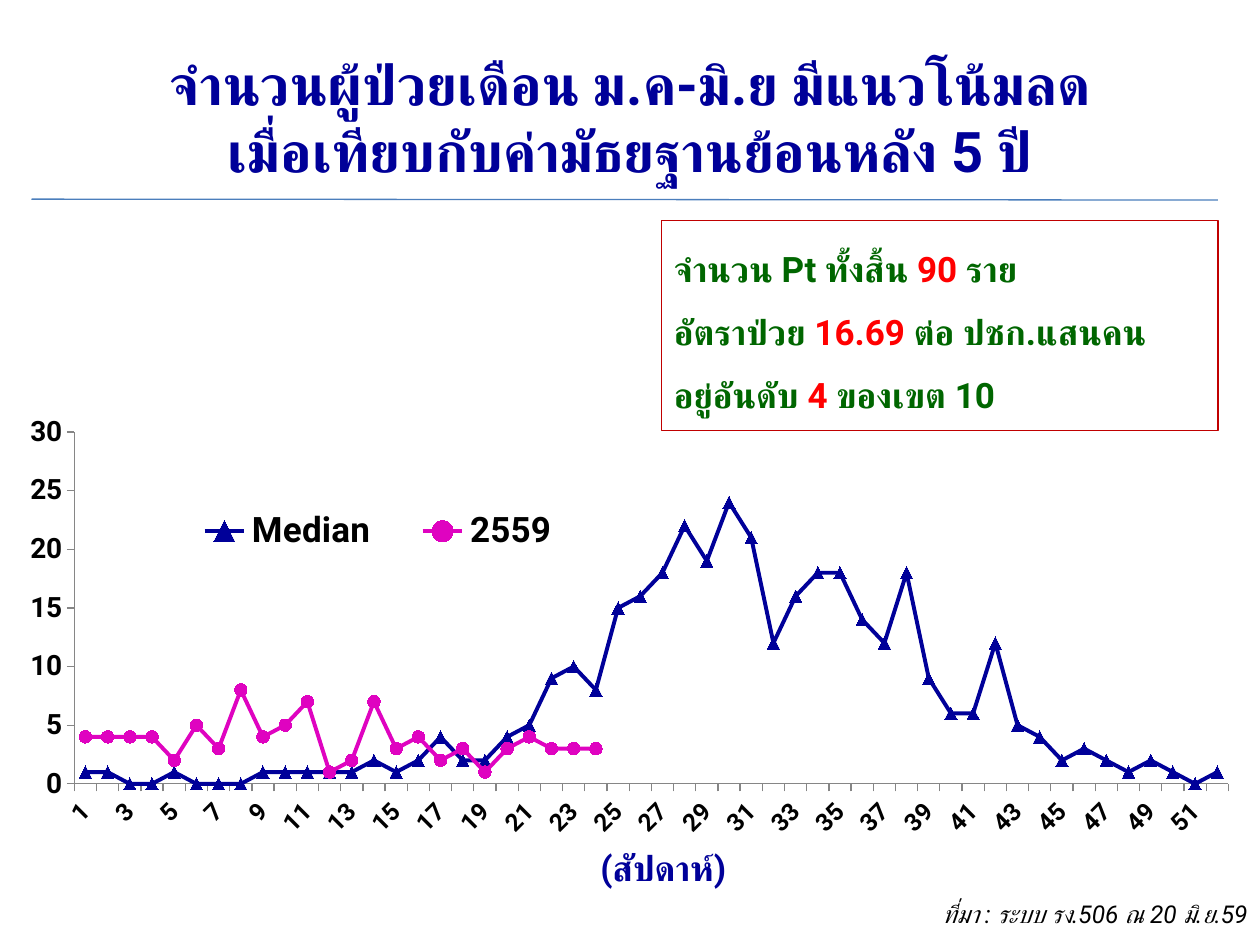
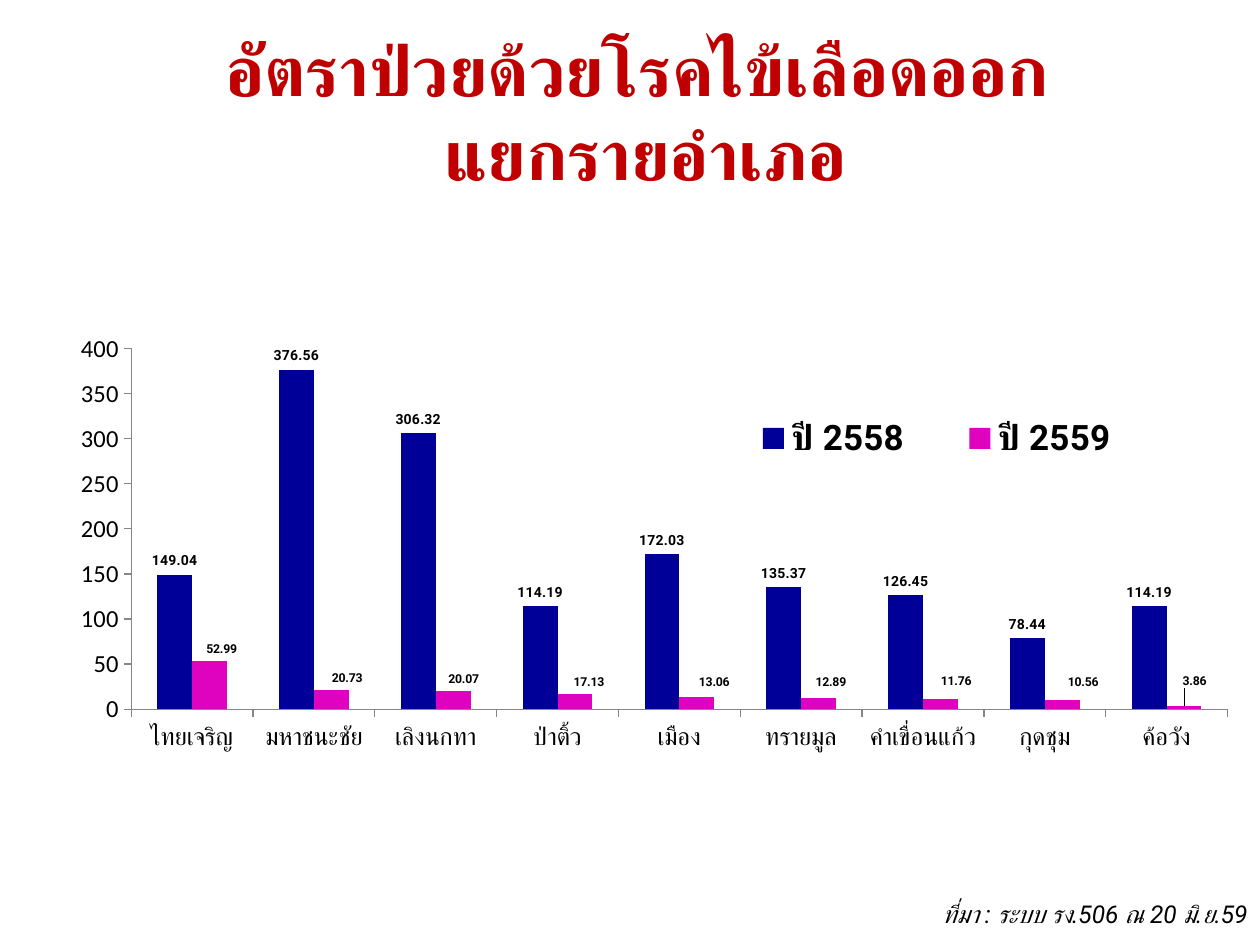
from dataclasses import dataclass

from lxml import etree
from pptx import Presentation
from pptx.chart.data import CategoryChartData
from pptx.dml.color import RGBColor
from pptx.enum.chart import (XL_CHART_TYPE, XL_LABEL_POSITION, XL_LEGEND_POSITION,
                             XL_MARKER_STYLE, XL_TICK_MARK)
from pptx.enum.shapes import MSO_CONNECTOR, MSO_SHAPE
from pptx.enum.text import MSO_ANCHOR, MSO_AUTO_SIZE, PP_ALIGN
from pptx.oxml.ns import qn
from pptx.util import Pt


@dataclass(frozen=True)
class Theme:
    font: str = "Roboto"
    chart_font: str = "Calibri"
    navy: str = "000099"
    pink: str = "DF03C0"
    crimson: str = "C00000"
    green: str = "006600"
    red: str = "FF0000"
    black: str = "000000"
    rule: str = "4B7EBC"
    axis: str = "868686"
    large_title: int = 40
    title: int = 32
    text: int = 20
    value_axis: int = 16
    small: int = 14
    chart: int = 10
    label: int = 8
    small_label: int = 7


@dataclass(frozen=True)
class Box:
    left: float
    top: float
    width: float
    height: float

    def lengths(self):
        return Pt(self.left), Pt(self.top), Pt(self.width), Pt(self.height)


THEME = Theme()
SLIDE = Box(0, 0, 720, 540)

WEEKLY_MEDIAN = [1, 1, 0, 0, 1, 0, 0, 0, 1, 1, 1, 1, 1, 2, 1, 2, 4, 2, 2, 4, 5, 9, 10, 8, 15, 16,
                 18, 22, 19, 24, 21, 12, 16, 18, 18, 14, 12, 18, 9, 6, 6, 12, 5, 4, 2, 3, 2, 1,
                 2, 1, 0, 1]
WEEKLY_2559 = [4, 4, 4, 4, 2, 5, 3, 8, 4, 5, 7, 1, 2, 7, 3, 4, 2, 3, 1, 3, 4, 3, 3, 3]

# District, rate in 2558, rate in 2559, and the shift of the 2559 label in points
DISTRICTS = [
    ("ไทยเจริญ", 149.04, 52.99, 7, 0),
    ("มหาชนะชัย", 376.56, 20.73, 9, 0),
    ("เลิงนกทา", 306.32, 20.07, 6, 0),
    ("ป่าติ้ว", 114.19, 17.13, 8, 0),
    ("เมือง", 172.03, 13.06, 10, -2),
    ("ทรายมูล", 135.37, 12.89, 7, -2),
    ("คำเขื่อนแก้ว", 126.45, 11.76, 9, -3),
    ("กุดชุม", 78.44, 10.56, 12, -3),
    ("ค้อวัง", 114.19, 3.86, 6, -7),
]


# Shared text and drawing helpers

def rgb(value):
    return RGBColor.from_string(value)


def style_font(font, size, color=THEME.black, bold=False, italic=False, name=THEME.font):
    font.size, font.bold, font.italic, font.name = Pt(size), bold, italic, name
    font.color.rgb = rgb(color)
    etree.SubElement(font._rPr, qn("a:cs")).set("typeface", name)


def add_text(para, text, align=None, line_spacing=None, **style):
    if align is not None:
        para.alignment = align
    if line_spacing is not None:
        para.line_spacing = line_spacing
    for index, line in enumerate(text.split("\n")):
        if index:
            para.add_line_break()
        span = para.add_run()
        span.text = line
        style_font(span.font, **style)


def add_title(page, box, text, size, color):
    title = page.shapes.title
    title.left, title.top, title.width, title.height = box.lengths()
    frame = title.text_frame
    frame.auto_size = MSO_AUTO_SIZE.NONE
    frame.vertical_anchor = MSO_ANCHOR.MIDDLE
    add_text(frame.paragraphs[0], text, align=PP_ALIGN.CENTER,
             size=size, color=color, bold=True)


def add_label(page, box, text, **style):
    frame = page.shapes.add_textbox(*box.lengths()).text_frame
    frame.word_wrap = True
    add_text(frame.paragraphs[0], text, **style)


def add_source(page, box):
    width, height = 306, 24.5
    add_label(page, Box(box.left + box.width - width, 510, width, height),
              "ที่มา : ระบบ รง.506 ณ 20 มิ.ย.59",
              align=PP_ALIGN.RIGHT, size=THEME.small, italic=True)


# Shared chart helpers

def set_layout(parent, position, **settings):
    """Give a chart element a manual layout, as its child at this position."""
    for old in parent.findall(qn("c:layout")):
        parent.remove(old)
    layout = etree.Element(qn("c:layout"))
    manual = etree.SubElement(layout, qn("c:manualLayout"))
    for name, value in settings.items():
        etree.SubElement(manual, qn(f"c:{name}")).set("val", str(value))
    parent.insert(position, layout)


def set_frame(parent, position, frame, **settings):
    set_layout(parent, position, **settings, xMode="edge", yMode="edge",
               x=frame.left, y=frame.top, w=frame.width, h=frame.height)


def style_axis(axis, **style):
    axis.has_major_gridlines = False
    axis.major_tick_mark = XL_TICK_MARK.OUTSIDE
    axis.minor_tick_mark = XL_TICK_MARK.NONE
    axis.format.line.color.rgb = rgb(THEME.axis)
    axis.format.line.width = Pt(0.75)
    style_font(axis.tick_labels.font, **style)


def add_chart(page, box, kind, categories, series, top_value, step,
              plot_frame, legend_frame, category_style, value_style):
    data = CategoryChartData()
    data.categories = categories
    for name, values in series:
        data.add_series(name, values)
    chart = page.shapes.add_chart(kind, *box.lengths(), data).chart
    chart.has_title = False
    style_font(chart.font, THEME.chart, name=THEME.chart_font)
    set_frame(chart._chartSpace.chart.plotArea, 0, plot_frame, layoutTarget="inner")

    style_axis(chart.category_axis, **category_style)
    style_axis(chart.value_axis, **value_style)
    chart.value_axis.minimum_scale = 0
    chart.value_axis.maximum_scale = top_value
    chart.value_axis.major_unit = step

    chart.has_legend = True
    legend = chart.legend
    legend.position = XL_LEGEND_POSITION.RIGHT
    legend.include_in_layout = False
    style_font(legend.font, THEME.text, bold=True)
    set_frame(legend._element, 1, legend_frame)
    chart.plots[0].vary_by_categories = False
    return chart


# Slide 1: weekly cases

def add_summary(page, box):
    panel = page.shapes.add_shape(MSO_SHAPE.RECTANGLE, *box.lengths())
    panel.shadow.inherit = False
    panel.fill.background()
    panel.line.color.rgb = rgb(THEME.crimson)
    panel.line.width = Pt(0.75)
    frame = panel.text_frame
    frame.word_wrap = False
    frame.vertical_anchor = MSO_ANCHOR.TOP
    facts = [("จำนวน Pt ทั้งสิ้น ", "90 ", "ราย"),
             ("อัตราป่วย ", "16.69 ", "ต่อ ปชก.แสนคน"),
             ("อยู่อันดับ ", "4 ", "ของเขต 10")]
    for index, fact in enumerate(facts):
        para = frame.add_paragraph() if index else frame.paragraphs[0]
        for text, color in zip(fact, (THEME.green, THEME.red, THEME.green)):
            add_text(para, text, align=PP_ALIGN.LEFT, line_spacing=1.5,
                     size=THEME.text, color=color, bold=True)


def add_weekly_chart(page, box):
    weeks = len(WEEKLY_MEDIAN)
    current = WEEKLY_2559 + [None] * (weeks - len(WEEKLY_2559))
    chart = add_chart(
        page, box, XL_CHART_TYPE.LINE_MARKERS,
        [str(week + 1) for week in range(weeks)],
        [("Median", WEEKLY_MEDIAN), ("2559", current)], 30, 5,
        plot_frame=Box(0.059, 0.075, 0.916, 0.798),
        legend_frame=Box(0.13, 0.24, 0.34, 0.12),
        category_style=dict(size=THEME.small, bold=True),
        value_style=dict(size=THEME.value_axis, bold=True))

    # Every second week is named, on a slant
    axis = chart.category_axis._element
    axis.find(qn("c:txPr")).find(qn("a:bodyPr")).set("rot", "-2700000")
    skip = etree.Element(qn("c:tickLblSkip"))
    skip.set("val", "2")
    axis.find(qn("c:noMultiLvlLbl")).addprevious(skip)

    looks = [(THEME.navy, XL_MARKER_STYLE.TRIANGLE), (THEME.pink, XL_MARKER_STYLE.CIRCLE)]
    for series, (color, marker) in zip(chart.plots[0].series, looks):
        series.smooth = False
        series.format.line.color.rgb = rgb(color)
        series.format.line.width = Pt(2.25)
        series.marker.style = marker
        series.marker.size = 7
        series.marker.format.fill.solid()
        series.marker.format.fill.fore_color.rgb = rgb(color)
        series.marker.format.line.color.rgb = rgb(color)


def add_rule(page, box):
    rule = page.shapes.add_connector(
        MSO_CONNECTOR.STRAIGHT, Pt(box.left), Pt(box.top),
        Pt(box.left + box.width), Pt(box.top + box.height))
    rule.line.color.rgb = rgb(THEME.rule)
    rule.line.width = Pt(0.75)
    etree.SubElement(rule._element.spPr, qn("a:effectLst"))


def build_weekly_slide(page, box):
    add_title(page, Box(box.left + 36, box.top + 21.6, 648, 90),
              "จำนวนผู้ป่วยเดือน ม.ค-มิ.ย มีแนวโน้มลด\nเมื่อเทียบกับค่ามัธยฐานย้อนหลัง 5 ปี",
              THEME.title, THEME.navy)
    add_summary(page, Box(box.left + 378, box.top + 126, 318, 120))
    add_weekly_chart(page, Box(box.left, box.top + 228, box.width, 252))
    add_rule(page, Box(box.left + 18, box.top + 113.8, 678, 0.5))
    add_label(page, Box(box.left + 336, box.top + 480, 156, 31.5), "(สัปดาห์)",
              size=THEME.text, color=THEME.navy, bold=True)
    add_source(page, box)


# Slide 2: rates by district

def add_district_chart(page, box):
    names, rates_2558, rates_2559, shifts_x, shifts_y = zip(*DISTRICTS)
    chart = add_chart(
        page, box, XL_CHART_TYPE.COLUMN_CLUSTERED, names,
        [("ปี 2558", rates_2558), ("ปี 2559", rates_2559)], 400, 50,
        plot_frame=Box(0.057, 0.051, 0.916, 0.799),
        legend_frame=Box(0.54, 0.19, 0.38, 0.12),
        category_style=dict(size=THEME.small),
        value_style=dict(size=THEME.small, name=THEME.chart_font))
    plot = chart.plots[0]
    plot.gap_width, plot.overlap = 150, 0

    looks = [(THEME.navy, THEME.label), (THEME.pink, THEME.small_label)]
    for series, (color, size) in zip(plot.series, looks):
        series.format.fill.solid()
        series.format.fill.fore_color.rgb = rgb(color)
        labels = series.data_labels
        labels.show_value = True
        labels.position = XL_LABEL_POSITION.OUTSIDE_END
        style_font(labels.font, size, bold=True)

    # Labels of the low bars move aside
    current = plot.series[1]
    for index, (shift_x, shift_y) in enumerate(zip(shifts_x, shifts_y)):
        label = current.points[index].data_label
        label.position = XL_LABEL_POSITION.OUTSIDE_END
        style_font(label.font, THEME.small_label, bold=True)
        element = current.data_labels._element.findall(qn("c:dLbl"))[index]
        set_layout(element, 1, x=round(shift_x / box.width, 4),
                   y=round(shift_y / box.height, 4))


def build_district_slide(page, box):
    add_title(page, Box(box.left + 36, box.top + 18, 666, 90),
              "อัตราป่วยด้วยโรคไข้เลือดออก \nแยกรายอำเภอ", THEME.large_title, THEME.crimson)
    add_district_chart(page, Box(box.left + 36, box.top + 186, 684, 258))
    add_source(page, box)


def main():
    deck = Presentation()
    deck.slide_width, deck.slide_height = Pt(SLIDE.width), Pt(SLIDE.height)
    title_only = deck.slide_layouts[5]
    for build in (build_weekly_slide, build_district_slide):
        build(deck.slides.add_slide(title_only), SLIDE)
    deck.save("out.pptx")


if __name__ == "__main__":
    main()
